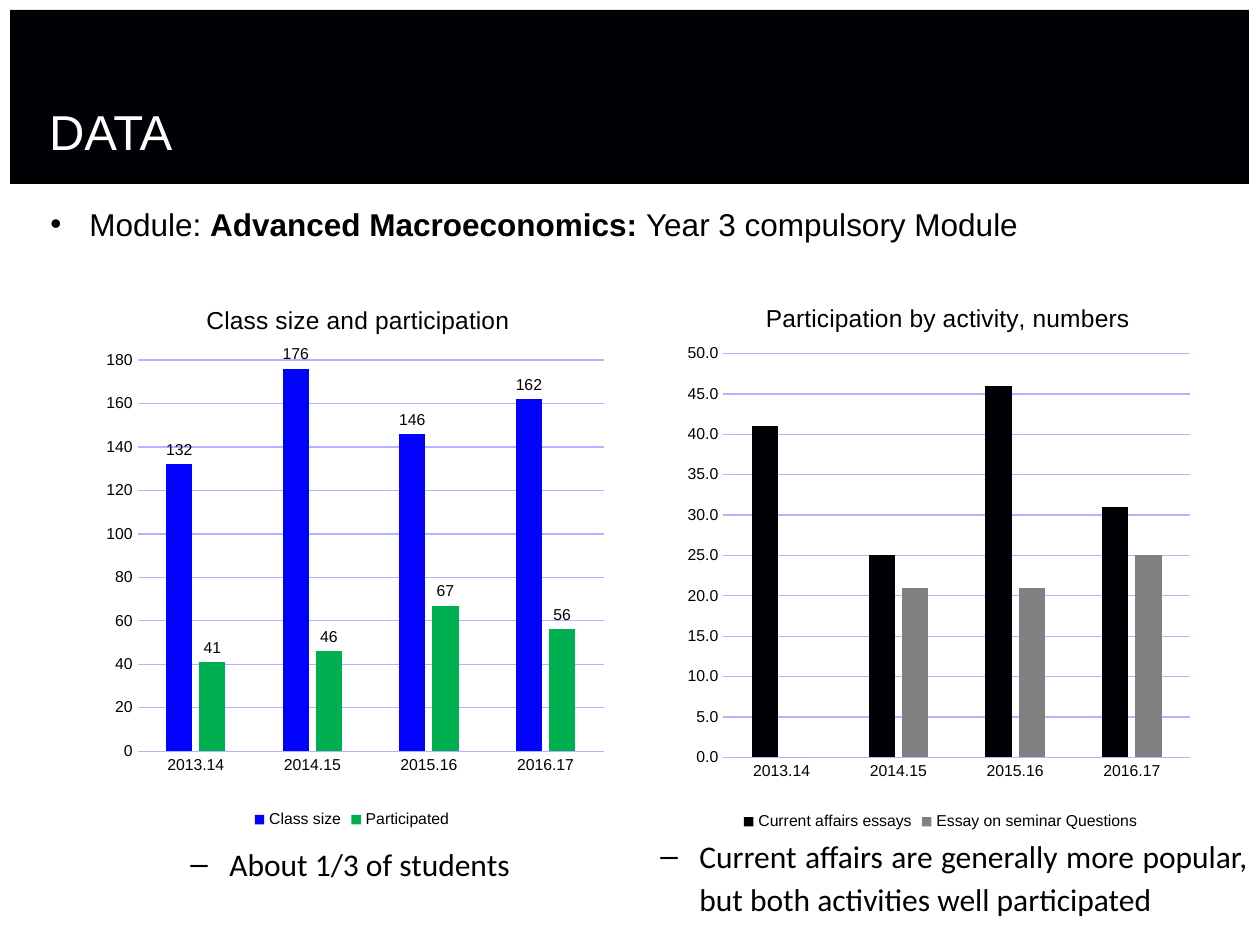
from dataclasses import dataclass

from lxml import etree
from pptx import Presentation
from pptx import util as u
from pptx.chart.data import CategoryChartData
from pptx.dml.color import RGBColor
from pptx.enum import chart as charts, shapes, text
from pptx.oxml.ns import qn

PX = 914400 / 126


def px(length):
    return u.Emu(round(length * PX))


@dataclass(frozen=True)
class Theme:
    ink: str = "000005"
    paper: str = "FFFFFF"
    grid: str = "B3B3FF"
    blue: str = "0202FF"
    green: str = "00B050"
    gray: str = "808080"
    sans: str = "Arial"
    humanist: str = "Calibri"
    heading: int = 28
    body: int = 18
    chart_title: int = 14
    chart_label: int = 9
    hairline: float = 0.75


def set_font(font, name, size, color):
    font.name = name
    font.size = u.Pt(size)
    font.color.rgb = RGBColor.from_string(color)


def place(element, **fractions):
    """Give a chart element a manual layout in fractions of the chart area."""
    layout = element.find(qn("c:layout"))
    if layout is None:
        layout = etree.Element(qn("c:layout"))
        element.insert(0, layout)
    manual = etree.SubElement(layout, qn("c:manualLayout"))
    if "w" in fractions:
        etree.SubElement(manual, qn("c:layoutTarget")).set("val", "inner")
    for side in "xy":
        etree.SubElement(manual, qn(f"c:{side}Mode")).set("val", "edge")
    for key, value in fractions.items():
        etree.SubElement(manual, qn(f"c:{key}")).set("val", str(value))


class SlideBuilder:
    def __init__(self, slide, theme):
        self.slide = slide
        self.theme = theme

    def banner(self, left, top, width, height):
        shape = self.slide.shapes.add_shape(
            shapes.MSO_SHAPE.RECTANGLE, px(left), px(top), px(width), px(height))
        shape.shadow.inherit = False
        shape.fill.solid()
        shape.fill.fore_color.rgb = RGBColor.from_string(self.theme.ink)
        shape.line.fill.background()

    def heading(self, words, left, top, width, height):
        box = self.slide.shapes.add_textbox(px(left), px(top), px(width), px(height))
        frame = box.text_frame
        frame.margin_left = frame.margin_right = 0
        frame.margin_top = frame.margin_bottom = 0
        frame.word_wrap = True
        frame.vertical_anchor = text.MSO_ANCHOR.BOTTOM
        para = frame.paragraphs[0]
        para.text = words
        set_font(para.font, self.theme.sans, self.theme.heading, self.theme.paper)

    def bullet(self, spans, left, top, width, height, mark, font, wrap=False, justify=False):
        """Add one bulleted paragraph; spans are (words, bold) pairs."""
        box = self.slide.shapes.add_textbox(px(left), px(top), px(width), px(height))
        frame = box.text_frame
        frame.word_wrap = wrap
        frame.auto_size = text.MSO_AUTO_SIZE.SHAPE_TO_FIT_TEXT
        para = frame.paragraphs[0]
        properties = para._p.get_or_add_pPr()
        properties.set("marL", str(px(39)))
        properties.set("indent", str(-px(39)))
        etree.SubElement(properties, qn("a:buFont")).set("typeface", self.theme.sans)
        etree.SubElement(properties, qn("a:buChar")).set("char", mark)
        if justify:
            para.alignment = text.PP_ALIGN.JUSTIFY
            para.line_spacing = 1.15
        set_font(para.font, font, self.theme.body, self.theme.ink)
        for words, bold in spans:
            span = para.add_run()
            span.text = words
            if bold:
                span.font.bold = True

    def column_chart(self, title, title_at, area, plot_area, categories, series,
                     maximum, step, number_format="General", labels=False):
        """Series are (name, values, color); title_at and plot_area are fractions."""
        theme = self.theme
        data = CategoryChartData()
        data.categories = categories
        for name, values, _ in series:
            data.add_series(name, values)
        chart = self.slide.shapes.add_chart(
            charts.XL_CHART_TYPE.COLUMN_CLUSTERED, *map(px, area), data).chart
        set_font(chart.font, theme.sans, theme.chart_label, theme.ink)

        chart.has_title = True
        para = chart.chart_title.text_frame.paragraphs[0]
        para.text = title
        set_font(para.font, theme.sans, theme.chart_title, theme.ink)
        para.font.bold = False
        place(chart.chart_title.element, **dict(zip("xy", title_at)))
        place(chart.element.find(".//" + qn("c:plotArea")), **dict(zip("xywh", plot_area)))

        chart.has_legend = True
        chart.legend.position = charts.XL_LEGEND_POSITION.BOTTOM
        chart.legend.include_in_layout = False
        set_font(chart.legend.font, theme.sans, theme.chart_label, theme.ink)

        value_axis = chart.value_axis
        value_axis.minimum_scale, value_axis.maximum_scale = 0, maximum
        value_axis.major_unit = step
        value_axis.has_major_gridlines = True
        value_axis.format.line.fill.background()
        value_axis.tick_labels.number_format = number_format
        value_axis.tick_labels.number_format_is_linked = False
        for axis in (chart.category_axis, value_axis):
            axis.major_tick_mark = charts.XL_TICK_MARK.NONE
            set_font(axis.tick_labels.font, theme.sans, theme.chart_label, theme.ink)
        for line in (chart.category_axis.format.line, value_axis.major_gridlines.format.line):
            line.color.rgb = RGBColor.from_string(theme.grid)
            line.width = u.Pt(theme.hairline)

        plot = chart.plots[0]
        plot.gap_width, plot.overlap = 219, -27
        plot.vary_by_categories = False
        for columns, (_, _, color) in zip(plot.series, series):
            columns.format.fill.solid()
            columns.format.fill.fore_color.rgb = RGBColor.from_string(color)
            columns.invert_if_negative = False
        if labels:
            plot.has_data_labels = True
            plot.data_labels.show_value = True
            plot.data_labels.position = charts.XL_LABEL_POSITION.OUTSIDE_END
            set_font(plot.data_labels.font, theme.sans, theme.chart_label, theme.ink)


def main():
    theme = Theme()
    deck = Presentation()
    deck.slide_width, deck.slide_height = px(1260), px(945)
    page = SlideBuilder(deck.slides.add_slide(deck.slide_layouts[6]), theme)
    years = ["2013.14", "2014.15", "2015.16", "2016.17"]

    page.banner(10, 10, 1239, 174)
    page.heading("DATA", 49, 58, 672, 102)
    page.bullet([("About 1/3 of students", False)],
                178, 833, 349, 54, "‒", theme.humanist, justify=True)
    page.bullet([("Current affairs are generally more popular, "
                  "but both activities well participated", False)],
                648, 825, 612, 101, "‒", theme.humanist, wrap=True, justify=True)
    page.bullet([("Module: ", False), ("Advanced Macroeconomics: ", True),
                 ("Year 3 compulsory Module", False)],
                38, 199, 1003, 50, "•", theme.sans)
    page.column_chart(
        "Class size and participation", (0.22, 0.03), (84, 283, 536, 551),
        (0.1, 0.14, 0.87, 0.71), years,
        [("Class size", (132, 176, 146, 162), theme.blue),
         ("Participated", (41, 46, 67, 56), theme.green)],
        maximum=180, step=20, labels=True)
    page.column_chart(
        "Participation by activity, numbers", (0.17, 0.04), (669, 275, 543, 561),
        (0.1, 0.14, 0.86, 0.72), years,
        [("Current affairs essays", (41, 25, 46, 31), theme.ink),
         ("Essay on seminar Questions", (0, 21, 21, 25), theme.gray)],
        maximum=50, step=5, number_format="0.0")
    deck.save("out.pptx")


if __name__ == "__main__":
    main()
